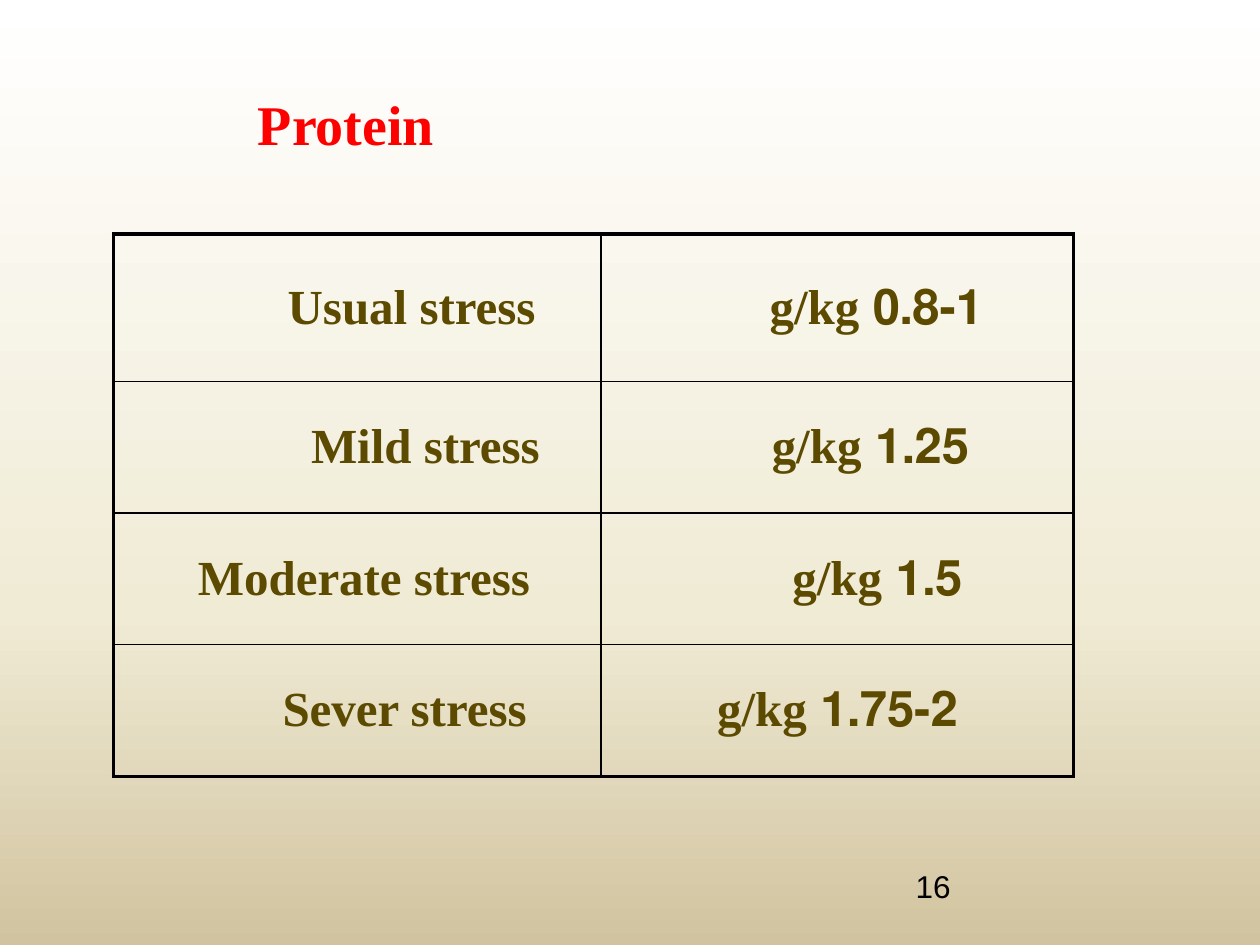
"""Builds the protein requirement slide with its table of stress levels."""
import copy
from dataclasses import dataclass

import pptx
import pptx.dml.color
import pptx.enum.text
import pptx.oxml
import pptx.oxml.ns
import pptx.util
from pptx.util import Cm

RGBColor = pptx.dml.color.RGBColor
ANCHOR = pptx.enum.text.MSO_ANCHOR
qn = pptx.oxml.ns.qn

RED = RGBColor(0xFF, 0x00, 0x00)
BROWN = RGBColor(0x5C, 0x4A, 0x00)
BLACK = RGBColor(0x00, 0x00, 0x00)
WHITE = RGBColor(0xFF, 0xFF, 0xFF)
CREAM = RGBColor(0xF0, 0xEB, 0xD5)
SAND = RGBColor(0xD1, 0xC3, 0x9F)
SERIF, SANS = "Times New Roman", "Arial"
THIN, THICK = 1, 2.25


@dataclass
class Need:
    stress: str
    stress_indent: float
    amount: str
    amount_indent: float


NEEDS = [
    Need("Usual stress", 2.18, "0.8-1", 1.57),
    Need("Mild stress", 2.74, "1.25", 1.33),
    Need("Moderate stress", 0.26, "1.5", 1.61),
    Need("Sever stress", 1.9, "1.75-2", 0),
]
COLUMN_WIDTHS = [9.83, 9.52]
ROW_HEIGHTS = [2.97, 2.65, 2.65, 2.66]


def paint_background(s) -> None:
    fill = s.background.fill
    fill.gradient()
    fill.gradient_angle = 270
    gs_list = next(s.element.iter(qn("a:gsLst")))
    gs_list.append(copy.deepcopy(gs_list[-1]))
    for stop, (position, color) in zip(fill.gradient_stops, [(0, WHITE), (0.65, CREAM), (1, SAND)]):
        stop.position = position
        stop.color.rgb = color


def style(p, size: float, color: RGBColor, bold: bool) -> None:
    p.font.size = pptx.util.Pt(size)
    p.font.bold = bold
    p.font.color.rgb = color


def add_text(s, box: tuple, text: str, name: str, size: float, color: RGBColor,
             bold: bool, anchor) -> None:
    tf = s.shapes.add_textbox(*map(Cm, box)).text_frame
    tf.word_wrap = True
    tf.vertical_anchor = anchor
    p = tf.paragraphs[0]
    p.text = text
    style(p, size, color, bold)
    p.font.name = name


def set_borders(cell, widths: dict) -> None:
    tc_pr = cell._tc.get_or_add_tcPr()
    for side, width in widths.items():
        tc_pr.append(pptx.oxml.parse_xml(
            f'<a:ln{side} {pptx.oxml.ns.nsdecls("a")} w="{int(width * 12700)}">'
            f'<a:solidFill><a:srgbClr val="{BLACK}"/></a:solidFill></a:ln{side}>'))


def fill_cell(cell, runs: list, indent: float) -> None:
    cell.margin_left = Cm(indent)
    cell.margin_right = cell.margin_top = cell.margin_bottom = 0
    cell.vertical_anchor = ANCHOR.MIDDLE
    cell.fill.background()
    p = cell.text_frame.paragraphs[0]
    p.alignment = pptx.enum.text.PP_ALIGN.CENTER
    p._p.get_or_add_pPr().set("rtl", "1")
    style(p, 28, BROWN, True)
    for text, name in runs:
        r = p.add_run()
        r.text = text
        r.font.name = name


def add_needs_table(s) -> None:
    size = [Cm(sum(COLUMN_WIDTHS)), Cm(sum(ROW_HEIGHTS))]
    table = s.shapes.add_table(len(NEEDS), 2, Cm(2.29), Cm(4.72), *size).table
    table.first_row = table.horz_banding = False
    for column, width in zip(table.columns, COLUMN_WIDTHS):
        column.width = Cm(width)
    for i, (need, height) in enumerate(zip(NEEDS, ROW_HEIGHTS)):
        table.rows[i].height = Cm(height)
        for j in range(2):
            set_borders(table.cell(i, j), {
                "L": THICK if j == 0 else THIN,
                "R": THICK if j == 1 else THIN,
                "T": THICK if i == 0 else THIN,
                "B": THICK if i == len(NEEDS) - 1 else THIN,
            })
        fill_cell(table.cell(i, 0), [(need.stress, SERIF)], need.stress_indent)
        fill_cell(table.cell(i, 1), [(need.amount, SANS), (" g/kg", SERIF)], need.amount_indent)


def main() -> None:
    prs = pptx.Presentation()
    prs.slide_width, prs.slide_height = Cm(25.4), Cm(19.05)
    s = prs.slides.add_slide(prs.slide_layouts[6])
    paint_background(s)
    add_text(s, (4.95, 0.99, 19.28, 2.97), "Protein", SERIF, 32, RED, True, ANCHOR.MIDDLE)
    add_needs_table(s)
    add_text(s, (18.21, 17.35, 5.92, 1.27), "16", SANS, 18, BLACK, False, ANCHOR.TOP)
    prs.save("out.pptx")


if __name__ == "__main__":
    main()
